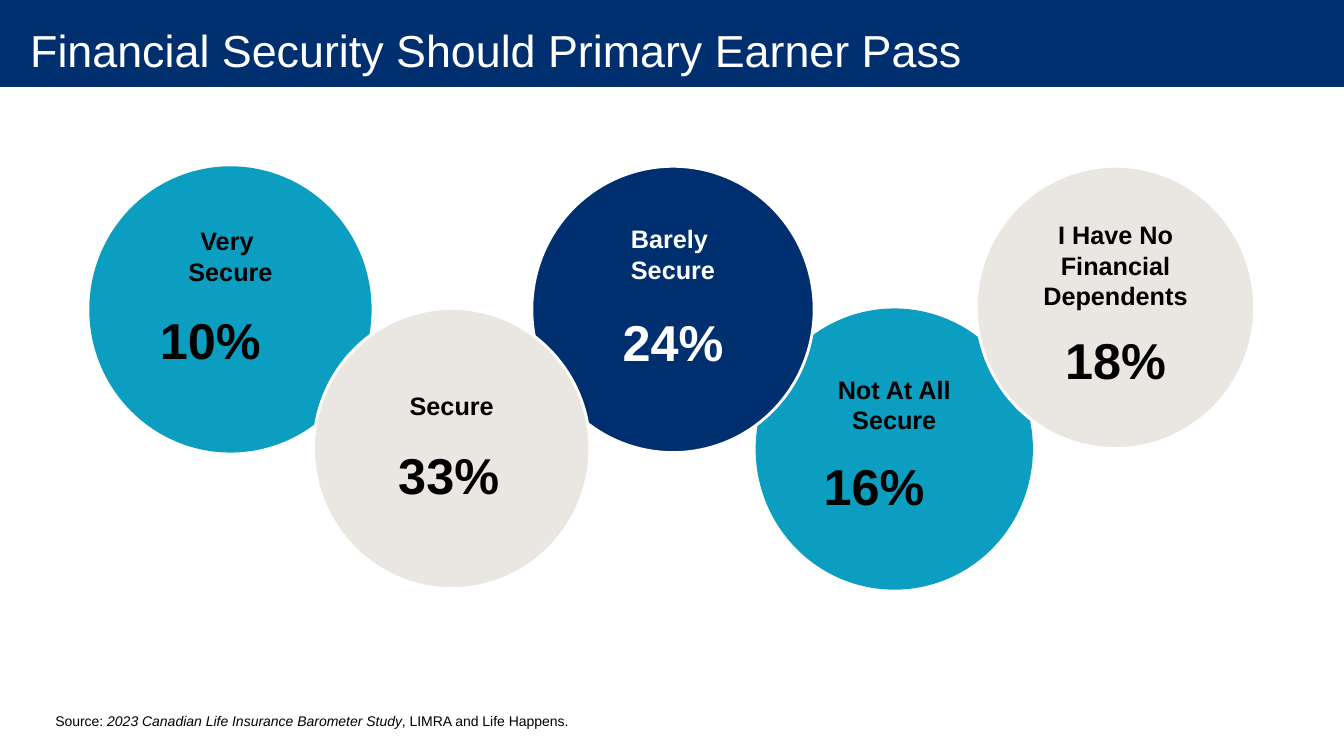
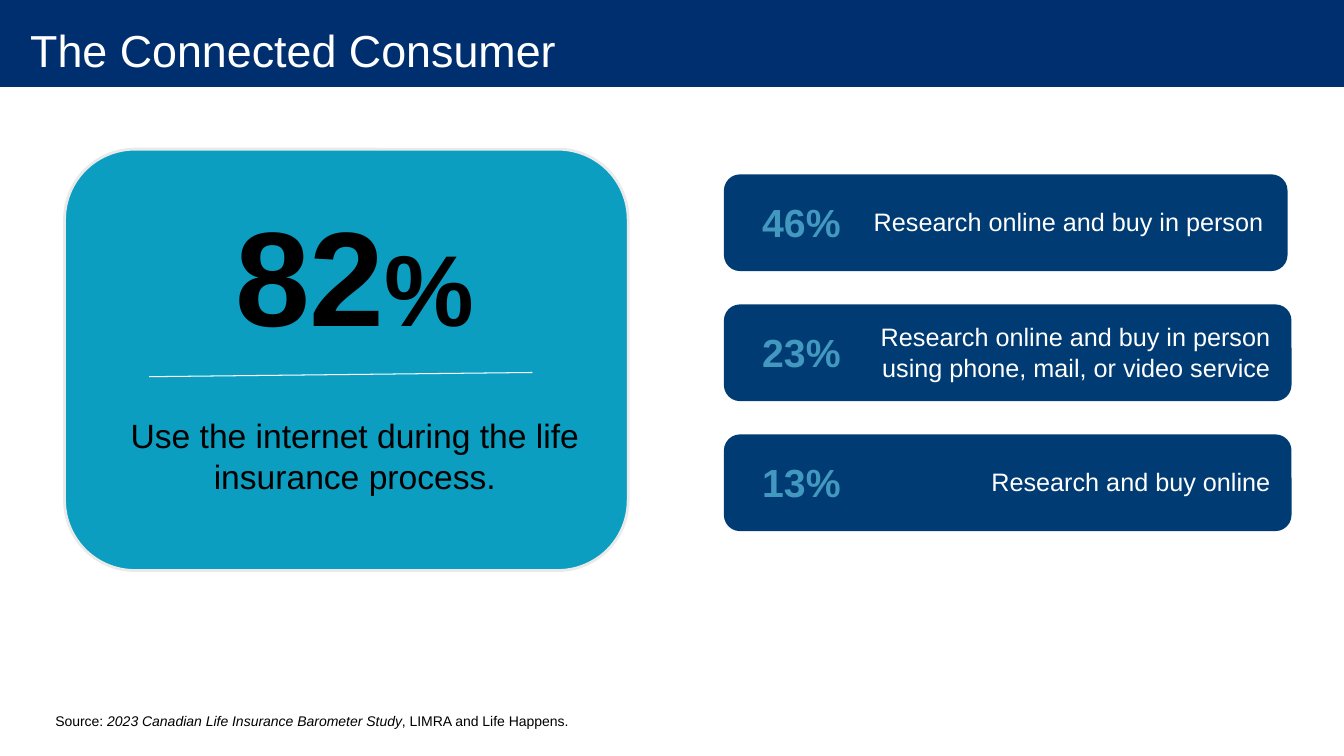
from collections import namedtuple

from lxml import etree
from pptx import Presentation
from pptx import util as u
from pptx.dml.color import RGBColor
from pptx.enum import shapes, text
from pptx.oxml import ns

WIDTH, HEIGHT = 13.33, 7.5
FONT = "Arial"
NAVY, TEAL, SAND = "002F70", "0B9EC1", "EAE6E2"
BAR_BLUE, SKY, CARD_EDGE = "003B73", "4298BE", "EBEAEA"
WHITE, BLACK = "FFFFFF", "000000"
LEFT, CENTER, RIGHT = text.PP_ALIGN.LEFT, text.PP_ALIGN.CENTER, text.PP_ALIGN.RIGHT
TOP, MIDDLE = text.MSO_ANCHOR.TOP, text.MSO_ANCHOR.MIDDLE


class Box(namedtuple("Box", "left top width height")):
    """A region in inches."""

    def share(self, left, top, width, height):
        """A region inside this one, given as shares of its size."""
        return Box(self.left + left * self.width, self.top + top * self.height,
                   width * self.width, height * self.height)

    def emu(self):
        return [u.Inches(length) for length in self]


PAGE = Box(0, 0, WIDTH, HEIGHT)


def color(hex_string):
    return RGBColor.from_string(hex_string)


def add_panel(slide, box, kind, fill, edge=None):
    panel = slide.shapes.add_shape(kind, *box.emu())
    panel.shadow.inherit = False
    panel.fill.solid()
    panel.fill.fore_color.rgb = color(fill)
    if edge:
        panel.line.color.rgb = color(edge)
        panel.line.width = u.Pt(2)
    else:
        panel.line.fill.background()


def add_text(slide, box, paragraphs, size, ink=BLACK, bold=False, align=LEFT,
             anchor=TOP, wrap=True, inset=0.1):
    """Each paragraph is a string or a list of (words, font settings)."""
    frame = slide.shapes.add_textbox(*box.emu()).text_frame
    frame.word_wrap = wrap
    frame.vertical_anchor = anchor
    frame.margin_left = u.Inches(inset)
    for index, content in enumerate(paragraphs):
        paragraph = frame.add_paragraph() if index else frame.paragraphs[0]
        paragraph.alignment = align
        runs = [(content, {})] if isinstance(content, str) else content
        for words, settings in runs:
            run = paragraph.add_run()
            run.text = words
            for name, value in settings.items():
                setattr(run.font, name, value)
        font = paragraph.font
        font.name, font.size, font.bold = FONT, u.Pt(size), bold
        font.color.rgb = color(ink)


def add_page(deck, title):
    """Blank slide with the shared title band and source line."""
    slide = deck.slides.add_slide(deck.slide_layouts[6])
    add_panel(slide, PAGE.share(0, 0, 1, 0.115), shapes.MSO_SHAPE.RECTANGLE, NAVY)
    add_text(slide, PAGE.share(0, 0, 1, 0.13), [title], 32, WHITE,
             anchor=MIDDLE, wrap=False, inset=0.3)
    source = [("Source: ", {}),
              ("2023 Canadian Life Insurance Barometer Study", {"italic": True}),
              (", LIMRA and Life Happens.", {})]
    add_text(slide, Box(0.45, 7.02, 7.44, 0.27), [source], 10)
    return slide


# Chain of circles
Bubble = namedtuple("Bubble", "column size fill edge ink label label_top "
                              "value value_top value_shift")
# Listed from back to front
BUBBLES = [
    Bubble(0, (2.8, 2.84), TEAL, None, BLACK, ["Very ", "Secure"], 0.54, "10%", 1.37, -0.2),
    Bubble(3, (2.75, 2.79), TEAL, None, BLACK, ["Not At All Secure"], 0.6, "16%", 1.41, -0.2),
    Bubble(2, (2.8, 2.84), NAVY, WHITE, WHITE, ["Barely ", "Secure"], 0.52, "24%", 1.39, 0),
    Bubble(1, (2.74, 2.78), SAND, WHITE, BLACK, ["Secure"], 0.76, "33%", 1.3, -0.03),
    Bubble(4, (2.76, 2.8), SAND, WHITE, BLACK, ["I Have No Financial Dependents"],
           0.48, "18%", 1.57, 0),
]


def add_bubble_chain(slide, box, bubbles):
    """Circles on even columns hang from the top, the others lie one step lower."""
    pitch, drop, text_width = box.width * 0.19, box.height / 3, 1.97
    first_center = box.left + box.width * 0.12
    for bubble in bubbles:
        width, height = bubble.size
        center = first_center + bubble.column * pitch
        top = box.top + bubble.column % 2 * drop
        add_panel(slide, Box(center - width / 2, top, width, height),
                  shapes.MSO_SHAPE.OVAL, bubble.fill, bubble.edge)
        label = Box(center - text_width / 2, top + bubble.label_top, text_width, 0.71)
        add_text(slide, label, bubble.label, 18, bubble.ink, True, CENTER)
        value = label._replace(left=label.left + bubble.value_shift,
                               top=top + bubble.value_top)
        add_text(slide, value, [bubble.value], 36, bubble.ink, True, CENTER)


# Card with the headline figure
def add_headline_card(slide, box):
    add_panel(slide, box, shapes.MSO_SHAPE.ROUNDED_RECTANGLE, TEAL, CARD_EDGE)
    figure = [("82", {"size": u.Pt(96)}), ("%", {})]
    add_text(slide, box.share(0.11, 0.09, 0.81, 0.41), [figure], 72, bold=True, align=CENTER)
    add_text(slide, box.share(0.08, 0.62, 0.87, 0.22),
             ["Use the internet during the life insurance process."], 24, align=CENTER)
    rule = box.share(0.15, 0.54, 0.68, -0.01)
    divider = slide.shapes.add_connector(
        shapes.MSO_CONNECTOR.STRAIGHT, u.Inches(rule.left), u.Inches(rule.top),
        u.Inches(rule.left + rule.width), u.Inches(rule.top + rule.height))
    divider.line.color.rgb = color(WHITE)
    divider.line.width = u.Pt(0.75)
    etree.SubElement(divider._element.spPr, ns.qn("a:effectLst"))


# Stack of bars, each with a percentage and what it stands for
CHANNELS = [
    ("46%", ["Research online and buy in person "], 5.59),
    ("23%", ["Research online and buy in person", "using phone, mail, or video service"], 5.63),
    ("13%", ["Research and buy online"], 5.63),
]


def add_channel_bars(slide, box, channels):
    bar_height, pitch = 0.96, 1.29
    for row, (percentage, channel, width) in enumerate(channels):
        bar = Box(box.left, box.top + row * pitch, width, bar_height)
        add_panel(slide, bar, shapes.MSO_SHAPE.ROUNDED_RECTANGLE, BAR_BLUE)
        line = bar._replace(width=box.width)
        add_text(slide, line.share(0.05, 0, 0.18, 0.98), [percentage], 28, SKY, True,
                 anchor=MIDDLE)
        add_text(slide, line.share(0.22, 0, 0.76, 0.98), channel, 18, WHITE,
                 align=RIGHT, anchor=MIDDLE)


def main():
    deck = Presentation()
    deck.slide_width, deck.slide_height = u.Inches(WIDTH), u.Inches(HEIGHT)

    security = add_page(deck, "Financial Security Should Primary Earner Pass")
    add_bubble_chain(security, Box(0.9, 1.65, 11.55, 4.23), BUBBLES)

    connected = add_page(deck, "The Connected Consumer")
    add_headline_card(connected, Box(0.64, 1.48, 5.59, 4.18))
    add_channel_bars(connected, Box(7.18, 1.73, 5.63, 3.54), CHANNELS)

    deck.save("out.pptx")


if __name__ == "__main__":
    main()
